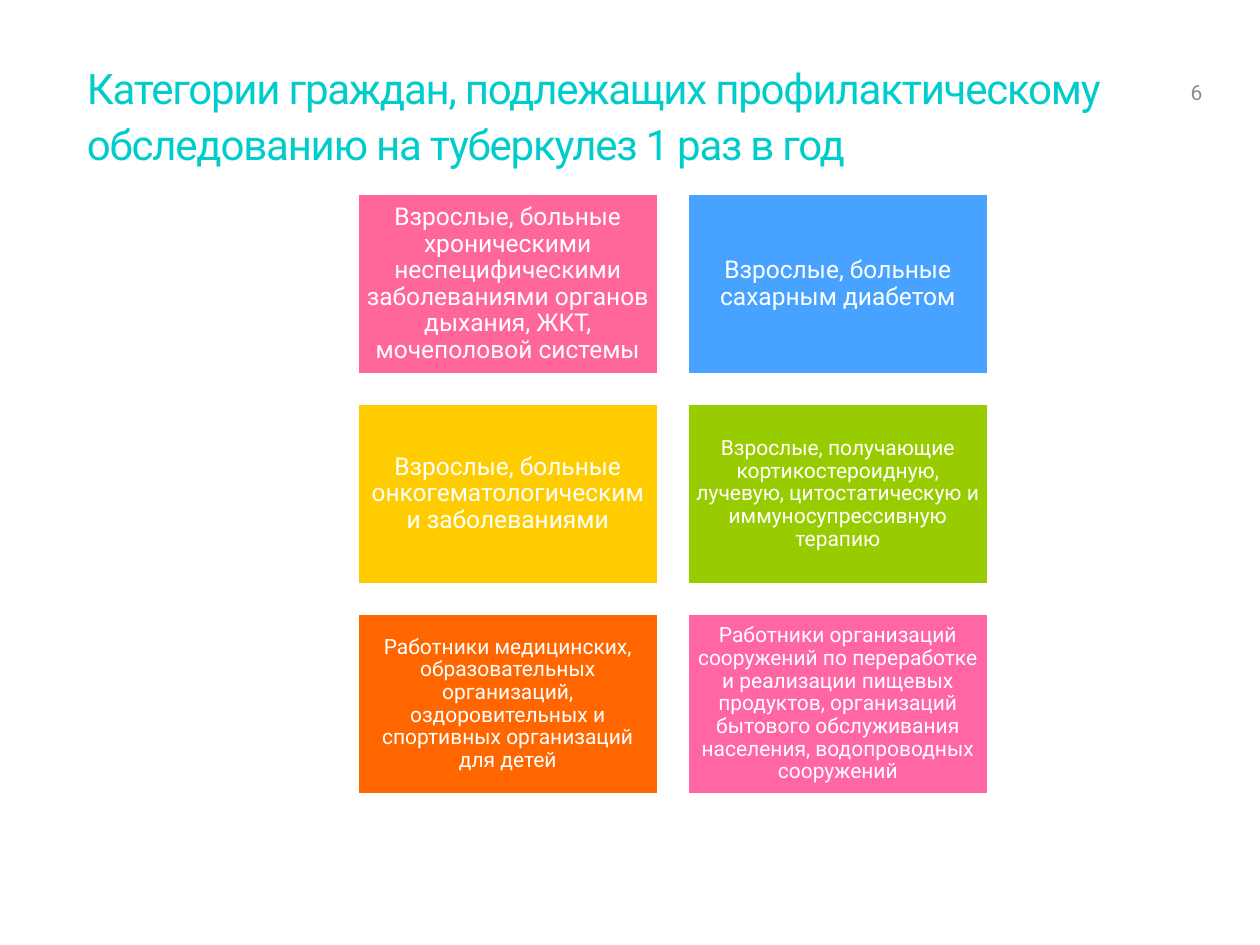
from pptx import Presentation
from pptx.dml.color import RGBColor
from pptx.enum.shapes import MSO_SHAPE
from pptx.enum.text import MSO_ANCHOR, PP_ALIGN
from pptx.util import Inches, Pt

COLORS = {
    "title": "00CCCC", "number": "8C8C90", "white": "FFFFFF",
    "pink": "FF6699", "blue": "47A3FF", "yellow": "FFCC00",
    "green": "99CC00", "orange": "FF6600", "rose": "FF66A3",
}
FONT = "Roboto"
TITLE = "Категории граждан, подлежащих профилактическому обследованию на туберкулез 1 раз в год"
CATEGORIES = [
    ("pink", 14, "Взрослые, больные хроническими неспецифическими заболеваниями "
     "органов дыхания, ЖКТ, мочеполовой системы"),
    ("blue", 14, "Взрослые, больные сахарным диабетом"),
    ("yellow", 14, "Взрослые, больные онкогематологическими заболеваниями"),
    ("green", 12, "Взрослые, получающие кортикостероидную, лучевую, "
     "цитостатическую и иммуносупрессивную терапию"),
    ("orange", 12, "Работники медицинских, образовательных организаций, "
     "оздоровительных и спортивных организаций для детей"),
    ("rose", 12, "Работники организаций сооружений по переработке и реализации "
     "пищевых продуктов, организаций бытового обслуживания населения, "
     "водопроводных сооружений"),
]
COLUMNS, ROWS = 2, 3
GAP = 0.24


def color(name):
    return RGBColor.from_string(COLORS[name])


def set_attributes(target, values):
    for name, value in values.items():
        setattr(target, name, value)


def write_text(shape, text, size, color_name, frame_format, paragraph_format, inset):
    frame = shape.text_frame
    horizontal, vertical = inset
    margins = {
        "margin_left": Inches(horizontal), "margin_right": Inches(horizontal),
        "margin_top": Inches(vertical), "margin_bottom": Inches(vertical),
    }
    set_attributes(frame, margins | frame_format)
    paragraph = frame.paragraphs[0]
    set_attributes(paragraph, paragraph_format)
    run = paragraph.add_run()
    run.text = text
    set_attributes(run.font, {"name": FONT, "size": Pt(size)})
    run.font.color.rgb = color(color_name)
    return run


def add_title(slide, box):
    shape = slide.shapes.add_textbox(*map(Inches, box))
    run = write_text(shape, TITLE, 24, "title",
                     {"word_wrap": True, "vertical_anchor": MSO_ANCHOR.TOP},
                     {"line_spacing": Pt(32)}, (0, 0.05))
    run.font._element.set("spc", "-70")


def add_page_number(slide, box):
    shape = slide.shapes.add_textbox(*map(Inches, box))
    write_text(shape, "6", 12, "number",
               {"word_wrap": False, "vertical_anchor": MSO_ANCHOR.BOTTOM},
               {}, (0, 0.04))


def add_category_grid(slide, box):
    left, top, width, height = box
    card_width = (width - GAP * (COLUMNS - 1)) / COLUMNS
    card_height = (height - GAP * (ROWS - 1)) / ROWS
    for index, (fill, size, text) in enumerate(CATEGORIES):
        row, column = divmod(index, COLUMNS)
        card = slide.shapes.add_shape(
            MSO_SHAPE.RECTANGLE,
            Inches(left + column * (card_width + GAP)),
            Inches(top + row * (card_height + GAP)),
            Inches(card_width), Inches(card_height))
        card.shadow.inherit = False
        card.fill.solid()
        card.fill.fore_color.rgb = color(fill)
        card.line.color.rgb = color("white")
        card.line.width = Pt(1)
        inset = 0.06 if size == 14 else 0.05
        write_text(card, text, size, "white",
                   {"word_wrap": True, "vertical_anchor": MSO_ANCHOR.MIDDLE},
                   {"alignment": PP_ALIGN.CENTER, "line_spacing": 0.9},
                   (inset, inset))


def main():
    presentation = Presentation()
    set_attributes(presentation, {"slide_width": Inches(10), "slide_height": Inches(7.5)})
    slide = presentation.slides.add_slide(presentation.slide_layouts[6])
    add_title(slide, (0.69, 0.4, 8.62, 1.03))
    add_page_number(slide, (9.45, 0.4, 0.38, 0.47))
    add_category_grid(slide, (2.84, 1.54, 5, 4.76))
    presentation.save("out.pptx")


if __name__ == "__main__":
    main()
